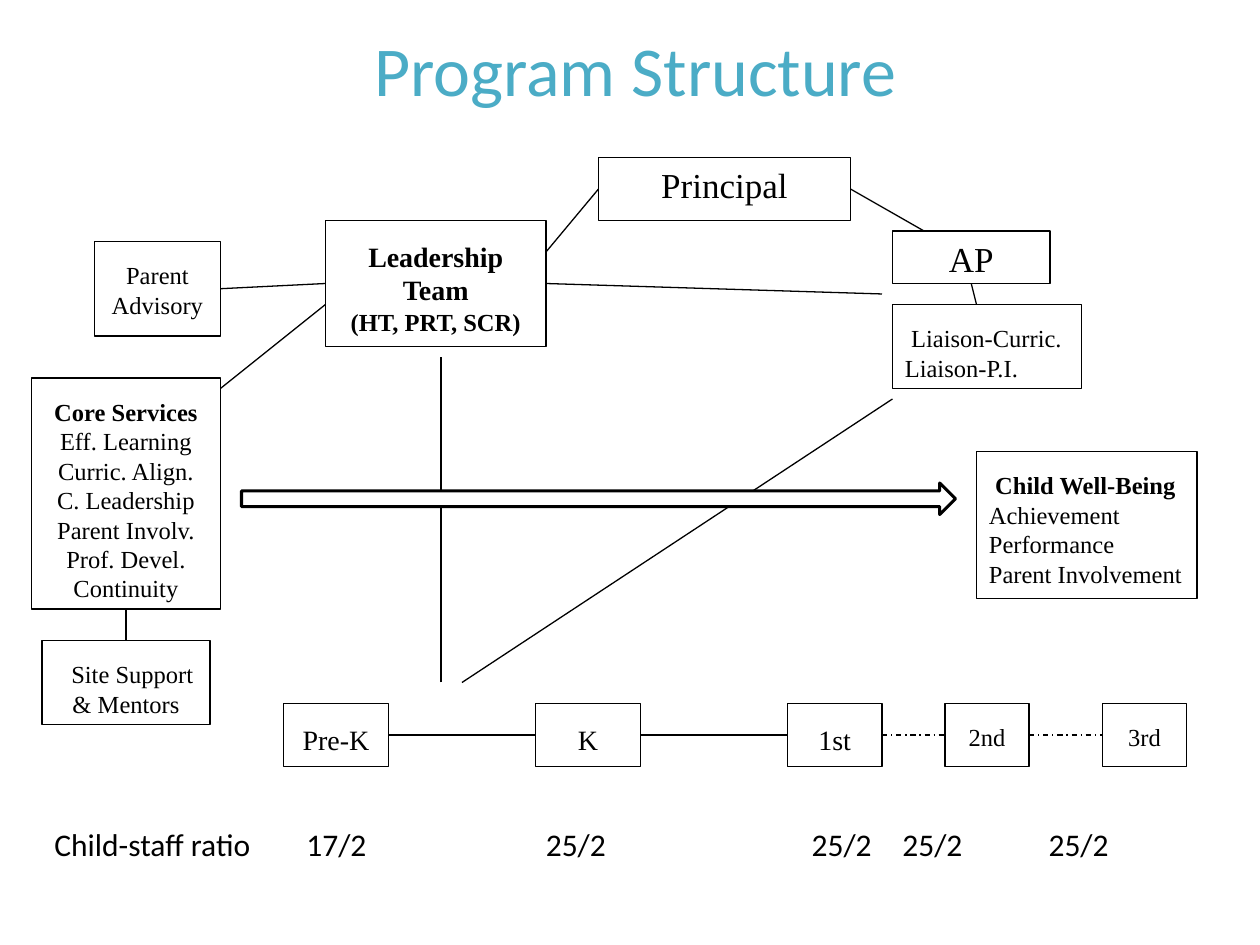
"""Builds the Program Structure organisation chart on a grid of 120 columns by 90 rows."""
from lxml import etree
from pptx import Presentation
from pptx import util as u
from pptx.dml.color import RGBColor
from pptx.enum import dml, shapes, text
from pptx.oxml.ns import qn

COLORS = {"title": "4BACC6", "ink": "000000", "paper": "FFFFFF"}
CENTER, LEFT = text.PP_ALIGN.CENTER, text.PP_ALIGN.LEFT


class Chart:
    serif, sans = "Times New Roman", "Calibri"
    columns, rows = 120, 90

    def __init__(self, deck):
        self.cell_w = deck.slide_width / self.columns
        self.cell_h = deck.slide_height / self.rows
        self.slide = deck.slides.add_slide(deck.slide_layouts[6])

    def place(self, *cells):
        return [round(n * (self.cell_h if i % 2 else self.cell_w)) for i, n in enumerate(cells)]

    def color(self, name):
        return RGBColor.from_string(COLORS[name])

    def outline(self, line, width=0.75):
        line.color.rgb = self.color("ink")
        line.width = u.Pt(width)

    def fill_text(self, frame, lines, size, font, color="ink", align=CENTER):
        frame.word_wrap = True
        frame.text = "\n".join(lines)
        for paragraph in frame.paragraphs:
            paragraph.alignment = align
            for run in paragraph.runs:
                run.font.size, run.font.name = u.Pt(size), font
                run.font.color.rgb = self.color(color)
        return frame

    def label(self, line, area, size, color="ink", align=CENTER):
        frame = self.slide.shapes.add_textbox(*self.place(*area)).text_frame
        return self.fill_text(frame, [line], size, self.sans, color, align)

    def shape(self, kind, area, width=0.75):
        shape = self.slide.shapes.add_shape(kind, *self.place(*area))
        shape.shadow.inherit = False
        shape.fill.solid()
        shape.fill.fore_color.rgb = self.color("paper")
        self.outline(shape.line, width)
        return shape

    def box(self, lines, area, size=14, align=CENTER, inset=0.15, heading=False, indent=0):
        frame = self.shape(shapes.MSO_SHAPE.RECTANGLE, area).text_frame
        frame.vertical_anchor = text.MSO_ANCHOR.TOP
        frame.margin_top = u.Inches(inset)
        self.fill_text(frame, lines, size, self.serif, align=align)
        first = frame.paragraphs[0]
        first.runs[0].font.bold = heading
        if indent:
            first._p.get_or_add_pPr().set("indent", str(u.Inches(indent)))
        return frame

    def line(self, *ends, dash=None):
        line = self.slide.shapes.add_connector(shapes.MSO_CONNECTOR.STRAIGHT, *self.place(*ends))
        self.outline(line.line)
        if dash:
            line.line.dash_style = dash
        etree.SubElement(line._element.spPr, qn("a:effectLst"))

    def arrow(self, area):
        self.shape(shapes.MSO_SHAPE.RIGHT_ARROW, area, 1.75)

    def tabbed(self, values, area, size, stops):
        frame = self.label("\t".join(values), area, size, align=LEFT)
        tabs = etree.SubElement(frame.paragraphs[0]._p.get_or_add_pPr(), qn("a:tabLst"))
        for stop in stops:
            etree.SubElement(tabs, qn("a:tab"), pos=str(u.Inches(stop)), algn="l")


def main():
    deck = Presentation()
    deck.slide_width, deck.slide_height = u.Inches(10), u.Inches(7.5)
    chart = Chart(deck)

    title = chart.label("Program Structure", (5, 0, 111, 13), 40, "title")
    title.vertical_anchor = text.MSO_ANCHOR.MIDDLE

    for ends in [(42, 65, 42, 34), (52, 27, 84, 28), (12, 61, 12, 58), (31, 29, 21, 37),
                 (85, 38, 44, 65), (31, 27, 21, 27.5), (57, 18, 52, 24), (81, 18, 88, 22),
                 (92.5, 27, 93, 29)]:
        chart.line(*ends)

    chart.box(["Principal"], (57, 15, 24, 6), 20, inset=0.05)
    chart.box(["AP"], (85, 22, 15, 5), 20, inset=0.05)
    chart.box(["Liaison-Curric.", "Liaison-P.I."], (85, 29, 18, 8), align=LEFT, indent=0.05)
    team = chart.box(["Leadership Team", "(HT, PRT, SCR)"], (31, 21, 21, 12), heading=True)
    team.paragraphs[0].runs[0].font.size = u.Pt(16)
    team.paragraphs[1].runs[0].font.bold = True
    chart.box(["Parent Advisory"], (9, 23, 12, 9))
    chart.box(["Core Services", "Eff. Learning", "Curric. Align.", "C. Leadership",
               "Parent Involv.", "Prof. Devel.", "Continuity"], (3, 36, 18, 22), heading=True)
    chart.box(["Site Support & Mentors"], (4, 61, 16, 8), indent=0.1)
    chart.box(["Child Well-Being", "Achievement", "Performance", "Parent Involvement"],
              (93, 43, 21, 14), align=LEFT, heading=True, indent=0.05)
    chart.arrow((23, 46, 68, 3))

    grades = [("Pre-K", 27, 10, 16), ("K", 51, 10, 16), ("1st", 75, 9, 16),
              ("2nd", 90, 8, 14), ("3rd", 105, 8, 14)]
    for grade, column, width, size in grades:
        chart.box([grade], (column, 67, width, 6), size)
    for (_, column, width, _), (_, following, _, size) in zip(grades, grades[1:]):
        dash = dml.MSO_LINE.DASH_DOT if size == 14 else None
        chart.line(column + width, 70, following, 70, dash=dash)

    chart.tabbed(["Child-staff ratio", "17/2", "25/2", "25/2", "25/2", "25/2"],
                 (4, 78, 112, 4.8), 18, [2, 3.9, 6.01, 6.73, 7.89])
    deck.save("out.pptx")


if __name__ == "__main__":
    main()
